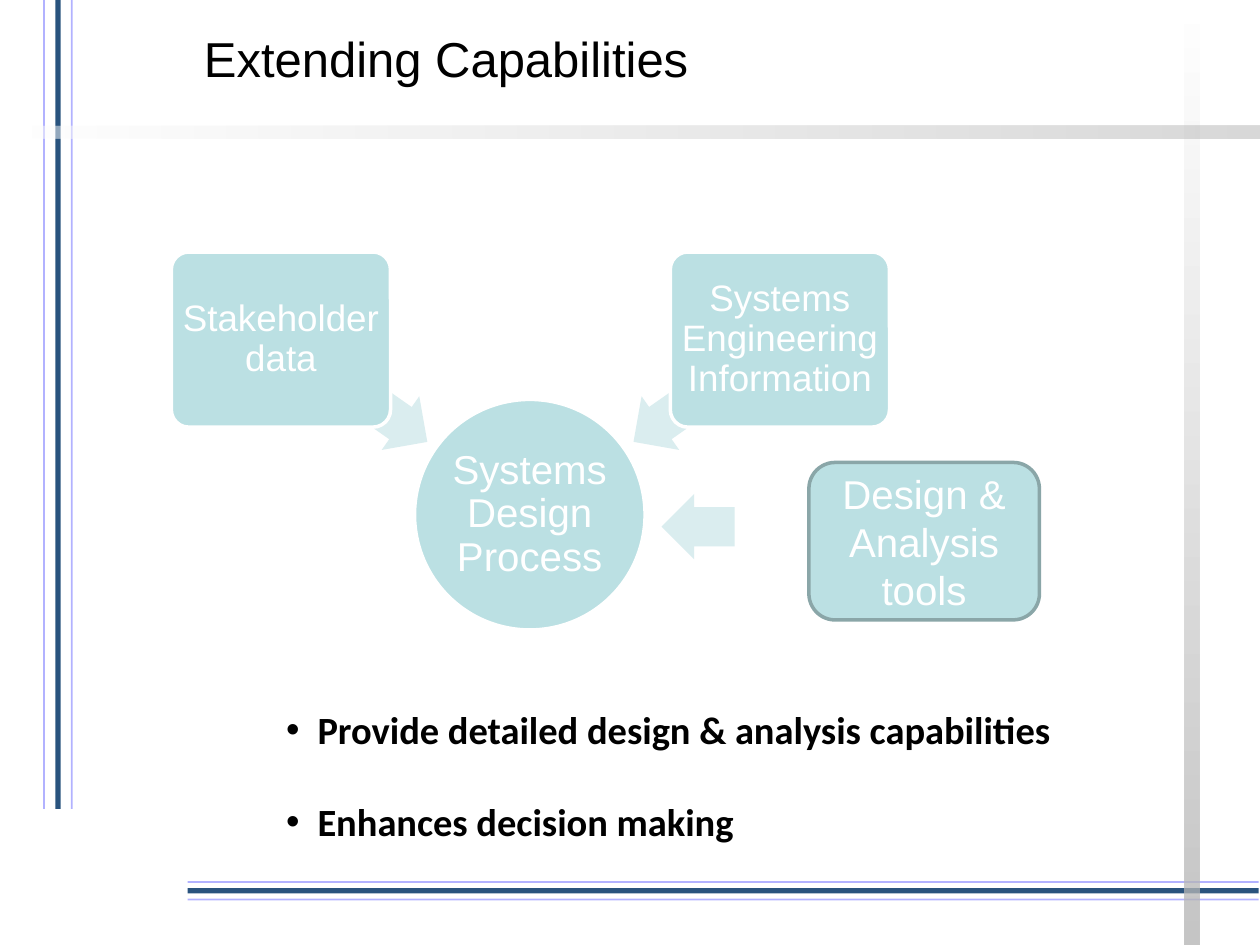
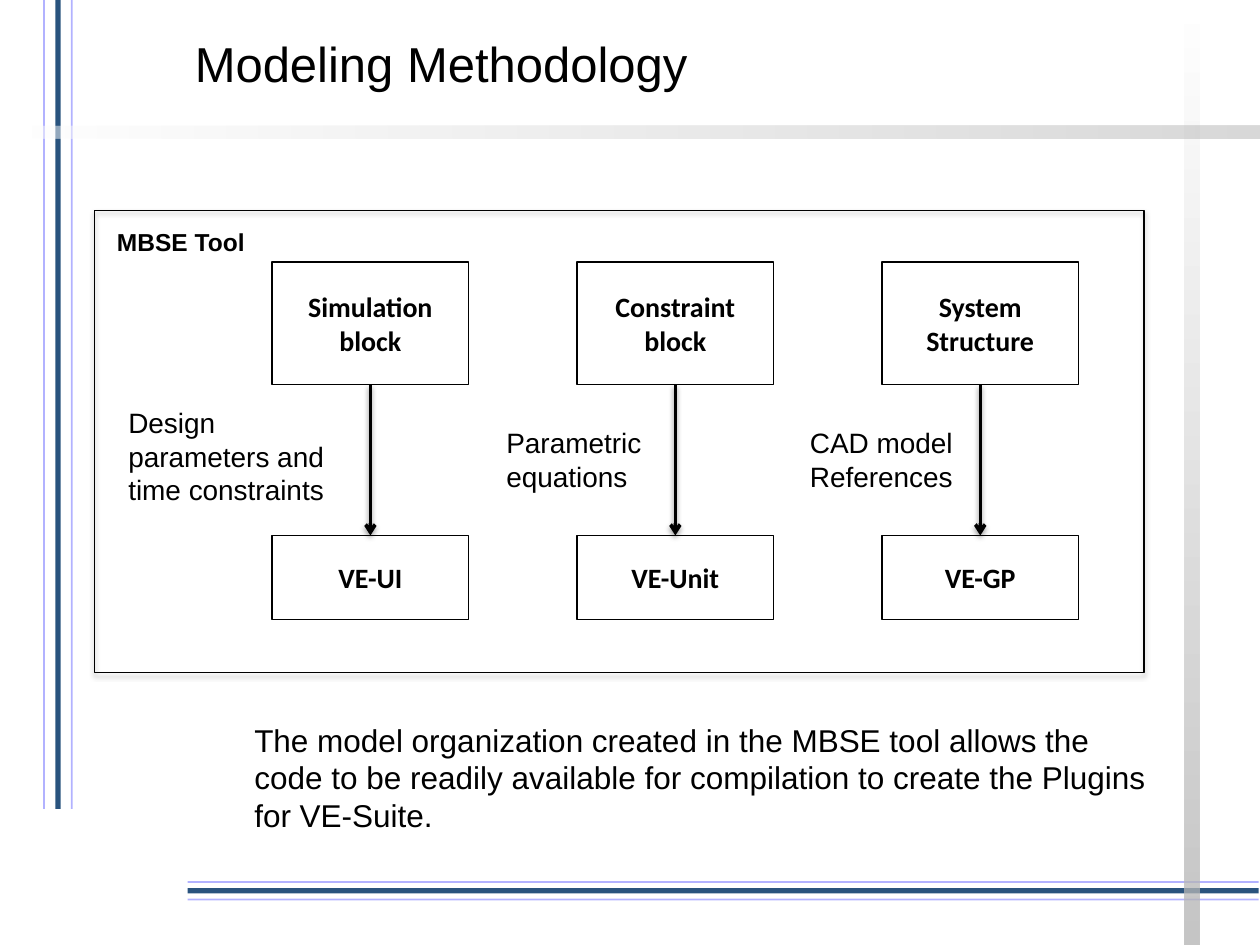
"""Build two slides on systems design and modeling in a ruled, banded style."""
from dataclasses import dataclass
from lxml.etree import SubElement
from pptx import Presentation
from pptx.dml.color import RGBColor
from pptx.enum.dml import MSO_LINE
from pptx.enum.shapes import MSO_CONNECTOR, MSO_SHAPE
from pptx.enum.text import MSO_ANCHOR, PP_ALIGN
from pptx.oxml.ns import qn
from pptx.shapes.autoshape import Shape
from pptx.shapes.base import BaseShape
from pptx.shapes.connector import Connector
from pptx.slide import Slide
from pptx.text.text import TextFrame
from pptx.util import Inches, Pt

RECT, ROUND = MSO_SHAPE.RECTANGLE, MSO_SHAPE.ROUNDED_RECTANGLE
OVAL, ARROW = MSO_SHAPE.OVAL, MSO_SHAPE.LEFT_ARROW
STRAIGHT, SOLID = MSO_CONNECTOR.STRAIGHT, MSO_LINE.SOLID
LEFT, CENTER = PP_ALIGN.LEFT, PP_ALIGN.CENTER
TOP, MIDDLE = MSO_ANCHOR.TOP, MSO_ANCHOR.MIDDLE
BOTTOM_SIDE, TOP_SIDE = 2, 0


@dataclass(frozen=True)
class Theme:
    black: str = "000000"
    white: str = "FFFFFF"
    teal: str = "BBE0E3"
    pale: str = "DAEDEF"
    edge: str = "8AA6A8"
    navy: str = "003366"
    lilac: str = "9999FF"
    gray: str = "B2B2B2"
    sans: str = "Arial"
    bold: str = "Calibri"
    title: int = 28
    node: int = 23
    card: int = 21
    list: int = 22
    body: int = 18
    block: int = 16
    label: int = 14


@dataclass(frozen=True)
class Area:
    left: float
    top: float
    width: float
    height: float

    def lengths(self) -> tuple[int, ...]:
        return tuple(Inches(v) for v in (self.left, self.top, self.width, self.height))


@dataclass(frozen=True)
class Rule:
    shift: float
    color: str
    weight: float
    opaque: int


@dataclass(frozen=True)
class Band:
    area: Area
    turn: int
    opaque: int


@dataclass(frozen=True)
class Node:
    kind: MSO_SHAPE
    area: Area
    text: str = ""
    size: int = 23
    fill: str = "BBE0E3"
    line: str = ""
    turn: int = 0
    adjust: tuple[float, ...] = ()
    inset: float = 0.1
    leading: float = 1.0


@dataclass(frozen=True)
class Flow:
    source: str
    target: str
    note: str
    place: Area


T = Theme()
RULES = (
    Rule(-1, T.lilac, 1, 75),
    Rule(1, T.lilac, 1, 75),
    Rule(0, T.navy, 3, 84),
)
BANDS = (
    Band(Area(5.71, 3.69, 7.5, 0.12), 90, 75),
    Band(Area(0, 1, 10, 0.1), 0, 50),
)
HEAD = (0.6, 0.5)
NODES = (
    Node(OVAL, Area(3.29, 3.17, 1.83, 1.83), "Systems Design Process",
         line=T.white, inset=0.02, leading=0.9),
    Node(ARROW, Area(2.1, 2.84, 1.42, 0.52), fill=T.pale, turn=215, adjust=HEAD),
    Node(ROUND, Area(1.36, 2, 1.74, 1.39), "Stakeholder data", T.card,
         line=T.white, adjust=(0.1,), inset=0.02, leading=0.9),
    Node(ARROW, Area(4.9, 2.84, 1.42, 0.52), fill=T.pale, turn=325, adjust=HEAD),
    Node(ROUND, Area(5.32, 2, 1.74, 1.39), "Systems Engineering Information", T.card,
         line=T.white, adjust=(0.1,), inset=0.02, leading=0.9),
    Node(ROUND, Area(6.42, 3.67, 1.83, 1.25), "Design & Analysis tools", line=T.edge),
    Node(ARROW, Area(5.25, 3.92, 0.58, 0.52), fill=T.pale, adjust=HEAD),
)
FLOWS = (
    Flow("Simulation block", "VE-UI", "Design parameters and time constraints",
         Area(0.92, 3.17, 1.92, 0.91)),
    Flow("Constraint block", "VE-Unit", "Parametric equations",
         Area(3.92, 3.33, 1.42, 0.64)),
    Flow("System Structure", "VE-GP", "CAD model References",
         Area(6.33, 3.33, 1.42, 0.64)),
)


def rgb(code: str) -> RGBColor:
    return RGBColor.from_string(code)


def write(frame: TextFrame, text: str, *, size: int, font: str = T.sans,
          color: str = T.black, bold: bool = False, align: PP_ALIGN = LEFT,
          anchor: MSO_ANCHOR = TOP, inset: float = 0.1, leading: float = 1.0,
          gap: float = 0, bullet: str = "") -> None:
    frame.word_wrap = True
    frame.vertical_anchor = anchor
    frame.margin_left = frame.margin_right = Inches(inset)
    frame.margin_top = frame.margin_bottom = Inches(inset / 2)
    frame.text = text
    for index, para in enumerate(frame.paragraphs):
        if bullet:
            props = para._p.get_or_add_pPr()
            props.set("marL", str(Inches(0.25)))
            props.set("indent", str(-Inches(0.25)))
            SubElement(props, qn("a:buChar")).set("char", bullet)
        para.alignment = align
        para.line_spacing = leading
        para.space_before = Pt(gap if index else 0)
        for run in para.runs:
            run.font.name, run.font.size = font, Pt(size)
            run.font.bold, run.font.color.rgb = bold, rgb(color)


def fade(shape: BaseShape, opaque: int) -> None:
    for color in list(shape.element.spPr.iter(qn("a:srgbClr"))):
        SubElement(color, qn("a:alpha")).set("val", str(opaque * 1000))


def shade(shape: BaseShape, opaque: int = 0) -> None:
    effects = SubElement(shape.element.spPr, qn("a:effectLst"))
    if opaque:
        cast = SubElement(effects, qn("a:outerShdw"), blurRad=str(Pt(3.1)),
                          dist=str(Pt(1.7)), dir="5400000", rotWithShape="0")
        color = SubElement(cast, qn("a:srgbClr"), val=T.black)
        SubElement(color, qn("a:alpha"), val=str(opaque * 1000))


def draw(slide: Slide, kind: MSO_SHAPE, area: Area, *, fill: str = "",
         line: str = "", weight: float = 2, shadow: int = 0) -> Shape:
    shape = slide.shapes.add_shape(kind, *area.lengths())
    if fill:
        shape.fill.solid()
        shape.fill.fore_color.rgb = rgb(fill)
    else:
        shape.fill.background()
    if line:
        shape.line.color.rgb = rgb(line)
        shape.line.width = Pt(weight)
    else:
        shape.line.fill.background()
    shade(shape, shadow)
    return shape


def label(slide: Slide, area: Area, text: str, size: int, bold: bool = False) -> None:
    box = slide.shapes.add_textbox(*area.lengths())
    write(box.text_frame, text, size=size, bold=bold)


def join(slide: Slide, start: tuple[float, float], end: tuple[float, float],
         color: str, weight: float) -> Connector:
    line = slide.shapes.add_connector(STRAIGHT, *(Inches(v) for v in (*start, *end)))
    line.line.color.rgb = rgb(color)
    line.line.width = Pt(weight)
    line.line.dash_style = SOLID
    return line


def place(shape: BaseShape, area: Area) -> None:
    shape.left, shape.top, shape.width, shape.height = area.lengths()


def title(slide: Slide, text: str, area: Area) -> None:
    place(slide.shapes.title, area)
    write(slide.shapes.title.text_frame, text, size=T.title, align=CENTER, anchor=MIDDLE)


def dress(deck: Presentation, slide: Slide) -> None:
    parts: list[BaseShape] = []
    for rule in RULES:
        x, y = 0.46 + 0.11 * rule.shift, 7.07 + 0.07 * rule.shift
        for start, end in (((x, 0), (x, 6.42)), ((1.49, y), (9.99, y))):
            line = join(slide, start, end, rule.color, rule.weight)
            fade(line, rule.opaque)
            shade(line)
            parts.append(line)
    for band in BANDS:
        bar = draw(slide, RECT, band.area)
        bar.rotation = band.turn
        bar.fill.gradient()
        bar.fill.gradient_angle = 0
        for stop, color in zip(bar.fill.gradient_stops, (T.white, T.gray)):
            stop.color.rgb = rgb(color)
        fade(bar, band.opaque)
        parts.append(bar)
    tree = deck.slide_master.shapes.element
    for number, part in enumerate(parts, 100):
        part.element.xpath(".//p:cNvPr")[0].set("id", str(number))
        tree.append(part.element)


def extend(slide: Slide) -> None:
    title(slide, "Extending Capabilities", Area(1.33, 0, 4.42, 0.92))
    for node in NODES:
        shape = draw(slide, node.kind, node.area, fill=node.fill, line=node.line)
        shape.rotation = node.turn
        for index, value in enumerate(node.adjust):
            shape.adjustments[index] = value
        if node.text:
            write(shape.text_frame, node.text, size=node.size, color=T.white,
                  align=CENTER, anchor=MIDDLE, inset=node.inset, leading=node.leading)
    body = slide.placeholders[1]
    place(body, Area(2.17, 5.55, 7.33, 1.4))
    points = "Provide detailed design & analysis capabilities\nEnhances decision making"
    write(body.text_frame, points, size=T.list, font=T.bold, bold=True, gap=26.5, bullet="•")


def block(slide: Slide, area: Area, text: str) -> Shape:
    shape = draw(slide, RECT, area, fill=T.white, line=T.black, weight=0.75)
    write(shape.text_frame, text, size=T.block, font=T.bold, bold=True,
          align=CENTER, anchor=MIDDLE)
    return shape


def model(slide: Slide) -> None:
    title(slide, "Modeling Methodology", Area(1.25, 0, 4.5, 1))
    for index, flow in enumerate(FLOWS):
        left = 2.16 + 2.42 * index
        source = block(slide, Area(left, 2.08, 1.56, 0.97), flow.source)
        target = block(slide, Area(left, 4.25, 1.56, 0.67), flow.target)
        arrow = join(slide, (left, 3.05), (left, 4.25), T.black, 2)
        arrow.begin_connect(source, BOTTOM_SIDE)
        arrow.end_connect(target, TOP_SIDE)
        SubElement(arrow.element.spPr.find(qn("a:ln")), qn("a:tailEnd"), type="arrow")
        shade(arrow, 38)
        label(slide, flow.place, flow.note, T.block)
    draw(slide, RECT, Area(0.75, 1.67, 8.33, 3.67), line=T.black, weight=0.75, shadow=35)
    label(slide, Area(0.83, 1.75, 1.25, 0.34), "MBSE Tool", T.label, bold=True)
    label(slide, Area(1.92, 5.67, 7.33, 1.01),
          "The model organization created in the MBSE tool allows the code to be readily "
          "available for compilation to create the Plugins for VE-Suite.", T.body)


def main() -> None:
    deck = Presentation()
    deck.slide_width, deck.slide_height = Inches(10), Inches(7.5)
    first = deck.slides.add_slide(deck.slide_layouts[1])
    dress(deck, first)
    extend(first)
    model(deck.slides.add_slide(deck.slide_layouts[5]))
    deck.save("out.pptx")


if __name__ == "__main__":
    main()
